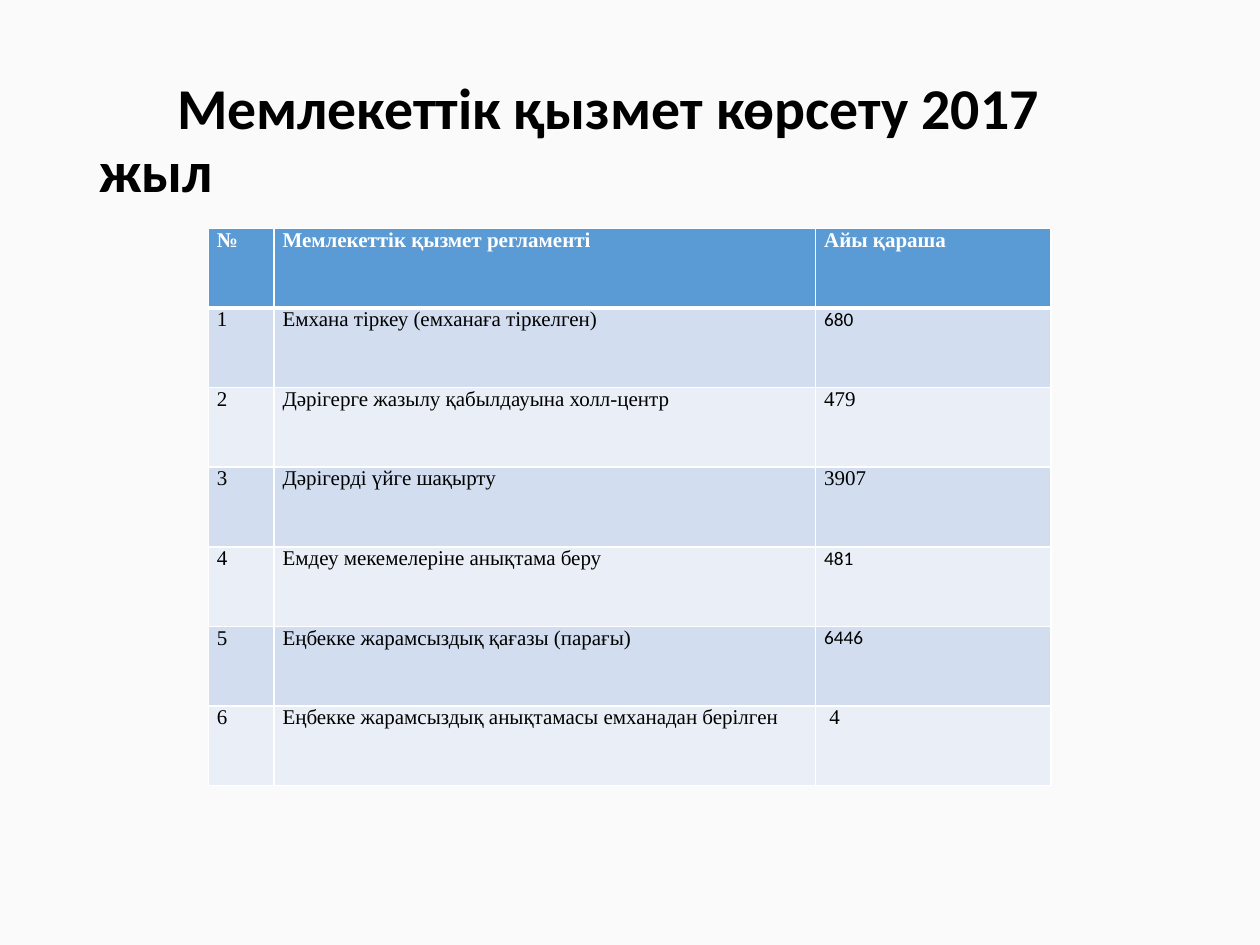
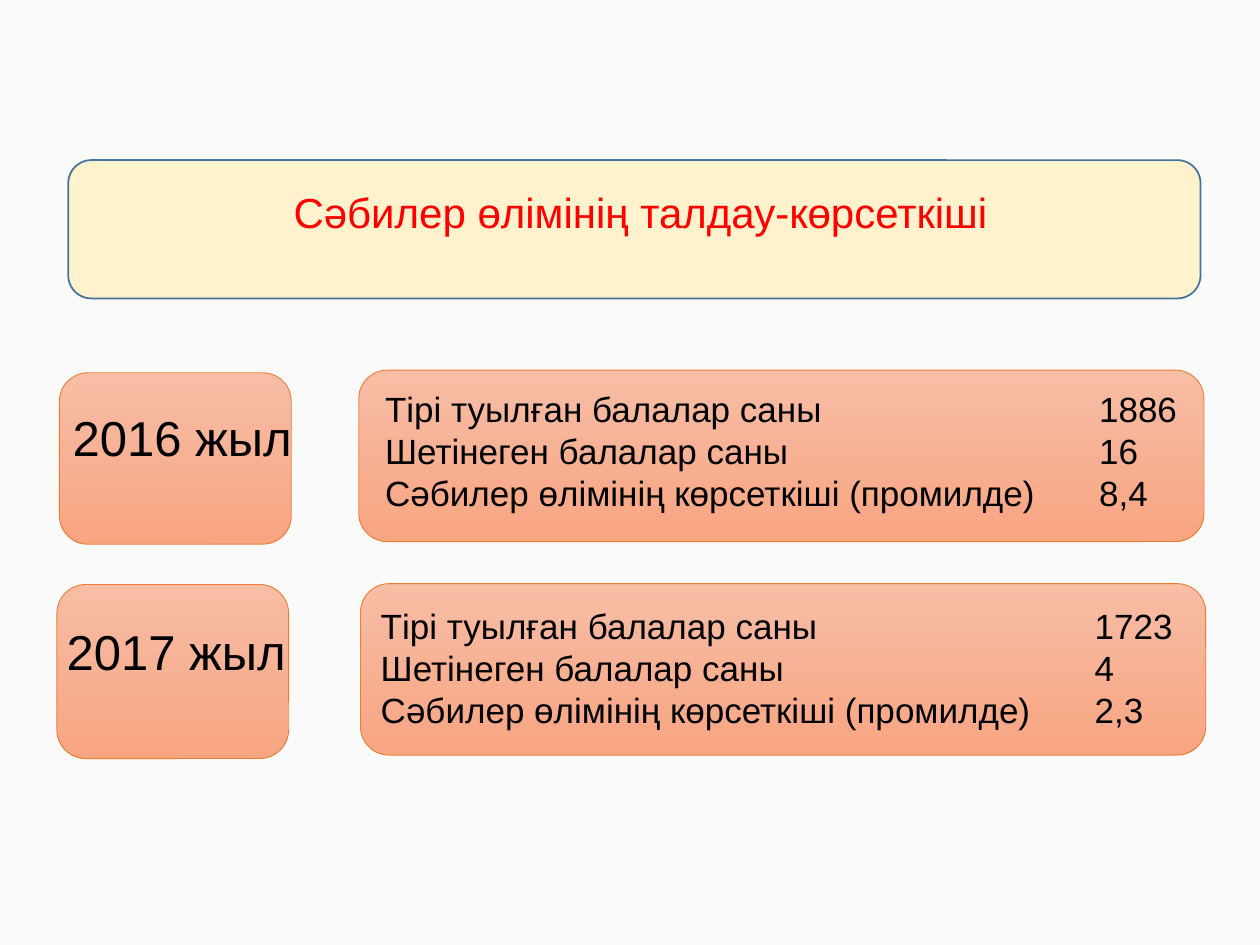
from dataclasses import dataclass

from lxml.etree import SubElement
from pptx import Presentation
from pptx.dml.color import RGBColor as Rgb
from pptx.enum.shapes import MSO_SHAPE as Shape
from pptx.enum.text import MSO_ANCHOR as Anchor, MSO_AUTO_SIZE as AutoSize, PP_ALIGN as Align
from pptx.oxml import parse_xml
from pptx.oxml.ns import nsdecls, qn
from pptx.util import Pt


@dataclass(frozen=True)
class Theme:
    background: str = "FAFAFA"
    black: str = "000000"
    white: str = "FFFFFF"
    red: str = "FF0000"
    header: str = "5B9BD5"
    bands: tuple = ("D2DEEF", "EAEFF7")
    banner_fill: str = "FFF2CC"
    banner_line: str = "43739E"
    card_gradient: tuple = ("F7BDA5", "F8A582")
    card_line: str = "ED7D31"
    sans: str = "Calibri"
    serif: str = "Times New Roman"
    plain: str = "Arial"
    title_size: int = 33
    banner_size: int = 24
    year_size: int = 28
    figure_size: int = 20
    table_size: int = 12
    small_size: int = 11


THEME = Theme()

SERVICE_HEADER = ("№", "Мемлекеттік қызмет регламенті", "Айы қараша")
SERVICES = (
    ("Емхана тіркеу (емханаға тіркелген)", "680"),
    ("Дәрігерге жазылу қабылдауына холл-центр", "479"),
    ("Дәрігерді үйге шақырту", "3907"),
    ("Емдеу мекемелеріне анықтама беру", "481"),
    ("Еңбекке жарамсыздық қағазы (парағы)", "6446"),
    ("Еңбекке жарамсыздық анықтамасы емханадан берілген", "4"),
)
CALIBRI_COUNTS = ("680", "481", "6446")
COLUMN_WIDTHS = (37.5, 309.5, 134.5)
ROW_HEIGHT = 45.5

FIGURE_LABELS = (
    "Тірі туылған балалар саны",
    "Шетінеген балалар саны",
    "Сәбилер өлімінің көрсеткіші (промилде)",
)
FIGURE_TAB = 408


def add_run(para, text, font, size, color, bold=None):
    run = para.add_run()
    run.text = text
    run.font.name = font
    run.font.size = Pt(size)
    run.font.color.rgb = Rgb.from_string(color)
    run.font.bold = bold


def set_title(slide, frame, text, font, size, color, align, bold=None):
    """Move the title placeholder to frame, fill it and return it."""
    title = slide.shapes.title
    title.left, title.top, title.width, title.height = map(Pt, frame)
    title.text_frame.auto_size = AutoSize.NONE
    title.text_frame.vertical_anchor = Anchor.MIDDLE
    para = title.text_frame.paragraphs[0]
    para.alignment = align
    para.line_spacing = 0.9
    add_run(para, text, font, size, color, bold)
    return title


def add_round_box(slide, frame, line_color, line_width):
    box = slide.shapes.add_shape(Shape.ROUNDED_RECTANGLE, *map(Pt, frame))
    box.shadow.inherit = False
    box.line.color.rgb = Rgb.from_string(line_color)
    box.line.width = Pt(line_width)
    return box


def add_card(slide, frame):
    card = add_round_box(slide, frame, THEME.card_line, 0.5)
    card.fill.gradient()
    card.fill.gradient_angle = 270
    for stop, color in zip(card.fill.gradient_stops, THEME.card_gradient):
        stop.color.rgb = Rgb.from_string(color)


def add_text(slide, frame, lines, size, tab=None):
    box = slide.shapes.add_textbox(*map(Pt, frame))
    box.text_frame.word_wrap = True
    for index, line in enumerate(lines):
        para = box.text_frame.add_paragraph() if index else box.text_frame.paragraphs[0]
        if tab:
            tab_list = SubElement(para._p.get_or_add_pPr(), qn("a:tabLst"))
            SubElement(tab_list, qn("a:tab"), pos=str(Pt(tab)), algn="l")
        add_run(para, line, THEME.plain, size, THEME.black)


def set_borders(cell, top, bottom):
    """Draw white borders, 1 point at the sides."""
    properties = cell._tc.get_or_add_tcPr()
    edges = (("L", 1), ("R", 1), ("T", top), ("B", bottom))
    for index, (edge, width) in enumerate(edges):
        border = parse_xml(
            f'<a:ln{edge} {nsdecls("a")} w="{Pt(width)}"><a:solidFill>'
            f'<a:srgbClr val="{THEME.white}"/></a:solidFill></a:ln{edge}>')
        properties.insert(index, border)


def fill_cell(cell, text, row):
    is_header = row == 0
    cell.margin_left = cell.margin_right = Pt(5)
    cell.margin_top = cell.margin_bottom = 0
    cell.fill.solid()
    fill = THEME.header if is_header else THEME.bands[(row - 1) % 2]
    cell.fill.fore_color.rgb = Rgb.from_string(fill)
    set_borders(cell, 3 if row == 1 else 1, 3 if is_header else 1)
    font, size = THEME.serif, THEME.table_size
    if text in CALIBRI_COUNTS:
        font, size = THEME.sans, THEME.small_size
    color = THEME.white if is_header else THEME.black
    add_run(cell.text_frame.paragraphs[0], text, font, size, color, is_header)


def add_service_table(slide, left, top):
    rows = [SERVICE_HEADER]
    rows += [(str(number), *service) for number, service in enumerate(SERVICES, 1)]
    size = (sum(COLUMN_WIDTHS), ROW_HEIGHT * len(rows))
    table = slide.shapes.add_table(
        len(rows), len(COLUMN_WIDTHS), *map(Pt, (left, top, *size))).table
    for column, width in zip(table.columns, COLUMN_WIDTHS):
        column.width = Pt(width)
    for row, texts in enumerate(rows):
        table.rows[row].height = Pt(ROW_HEIGHT)
        for column, text in enumerate(texts):
            fill_cell(table.cell(row, column), text, row)
    last_count = table.cell(len(rows) - 1, 2)
    last_count.margin_left = Pt(8)


def build_services_slide(slide):
    title = set_title(slide, (49.5, 29, 620.5, 104.5), "Мемлекеттік қызмет көрсету 2017 жыл",
                      THEME.sans, THEME.title_size, THEME.black, Align.LEFT, bold=True)
    title.text_frame.margin_right = Pt(14)
    first_line = title.text_frame.paragraphs[0]._p.get_or_add_pPr()
    first_line.set("indent", str(Pt(44.5)))
    add_service_table(slide, 119, 130.5)


def build_mortality_slide(slide):
    title = set_title(slide, (27.5, 95, 677, 104.5), "Сәбилер өлімінің талдау-көрсеткіші",
                      THEME.plain, THEME.banner_size, THEME.red, Align.CENTER)
    title.text_frame.vertical_anchor = Anchor.TOP
    title.text_frame.margin_top = Pt(15)
    banner = add_round_box(slide, (39, 91.5, 647, 79), THEME.banner_line, 1)
    banner.fill.solid()
    banner.fill.fore_color.rgb = Rgb.from_string(THEME.banner_fill)
    title.element.addprevious(banner.element)

    # year, year card, year text, figures card, figures text, values
    years = (
        ("2016 жыл", (34, 213, 132.5, 98), (34.5, 229.5, 150, 41),
         (205, 211.5, 483, 98), (213, 218, 496, 80), ("1886", "16", "8,4")),
        ("2017 жыл", (32.5, 334, 132.5, 99.5), (31, 351.5, 151, 41),
         (206, 333.5, 483, 98), (210.5, 342, 496, 80), ("1723", "4", "2,3")),
    )
    for year, year_card, year_text, figures_card, figures_text, values in years:
        add_card(slide, year_card)
        add_text(slide, year_text, [year], THEME.year_size)
        add_card(slide, figures_card)
        figures = [f"{label}\t{value}" for label, value in zip(FIGURE_LABELS, values)]
        add_text(slide, figures_text, figures, THEME.figure_size, FIGURE_TAB)


def main():
    deck = Presentation()
    deck.slide_width, deck.slide_height = Pt(720), Pt(540)
    background = deck.slide_master.background.fill
    background.solid()
    background.fore_color.rgb = Rgb.from_string(THEME.background)
    title_only = deck.slide_layouts.get_by_name("Title Only")
    for build in (build_services_slide, build_mortality_slide):
        build(deck.slides.add_slide(title_only))
    deck.save("out.pptx")


if __name__ == "__main__":
    main()
